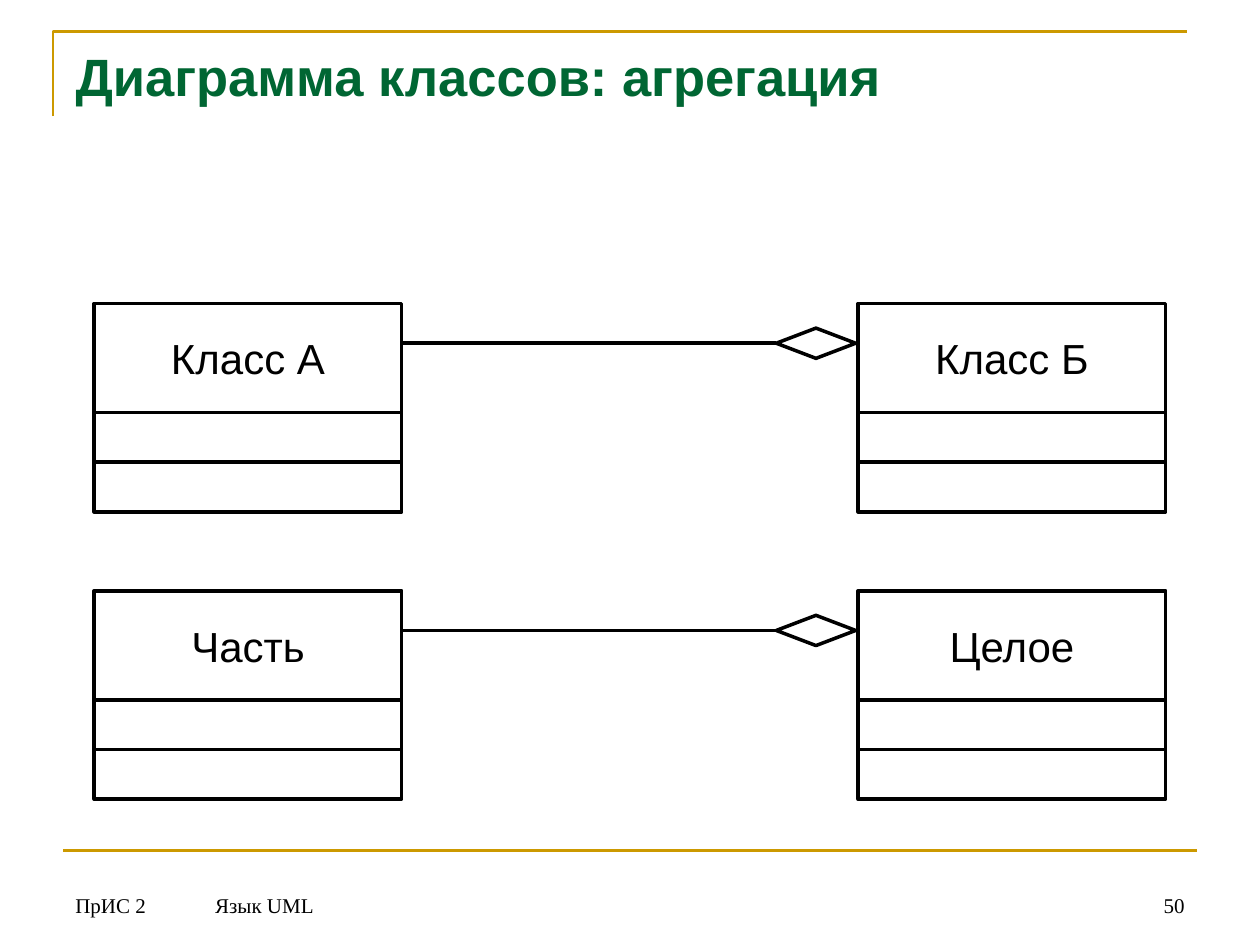
from pptx import Presentation
from pptx.dml.color import RGBColor
from pptx.enum import shapes as kinds, text as txt
from pptx.oxml.ns import qn
from pptx.util import Cm, Pt

TITLE = "Диаграмма классов: агрегация"
# (part, whole, top in cm)
AGGREGATIONS = [("Класс А", "Класс Б", 6.12), ("Часть", "Целое", 11.91)]
# (wording, left, width, alignment)
FOOTER = [
    ("ПрИС 2", 1.27, 2.44, txt.PP_ALIGN.LEFT),
    ("Язык UML", 4.09, 18.39, txt.PP_ALIGN.LEFT),
    ("50", 22.71, 1.42, txt.PP_ALIGN.RIGHT),
]

THEME = {
    "ink": RGBColor(0, 0, 0),
    "title": RGBColor(0x00, 0x66, 0x33),
    "rule": RGBColor(0xCC, 0x99, 0x00),
    "sans": "Arial",
    "serif": "Times New Roman",
    "title_size": 30,
    "class_size": 24,
    "footer_size": 12,
    "rule_width": 1.5,
    "box_width": 2,
    "link_width": 2.25,
}

PART_LEFT, WHOLE_LEFT, CLASS_W = 1.9, 17.3, 6.2
NAME_H, SECTION_H = 2.2, 1.0
DIAMOND_LEFT, DIAMOND_W, DIAMOND_H = 15.65, 1.6, 0.61
LINK_DROP = 0.8


def write(frame, wording, font, size, color, align, anchor, bold=False):
    frame.text = wording
    frame.word_wrap = True
    frame.auto_size = txt.MSO_AUTO_SIZE.NONE
    frame.vertical_anchor = anchor
    paragraph = frame.paragraphs[0]
    paragraph.alignment = align
    style = paragraph.runs[0].font
    style.name, style.size, style.bold = font, Pt(size), bold
    style.color.rgb = color


def stroke(line, color, width):
    line.color.rgb = color
    line.width = Pt(width)


def add_outline(slide, kind, left, top, width, height):
    outline = slide.shapes.add_shape(kind, Cm(left), Cm(top), Cm(width), Cm(height))
    outline.shadow.inherit = False
    outline.fill.background()
    stroke(outline.line, THEME["ink"], THEME["box_width"])
    return outline


def add_link(slide, start, end, color, width):
    link = slide.shapes.add_connector(
        kinds.MSO_CONNECTOR.STRAIGHT, *(Cm(v) for v in (*start, *end)))
    stroke(link.line, color, width)
    properties = link._element.spPr
    properties.append(properties.makeelement(qn("a:effectLst"), {}))
    return link


def add_class(slide, name, left, top):
    """Name compartment with two empty sections below it."""
    rect = kinds.MSO_SHAPE.RECTANGLE
    heading = add_outline(slide, rect, left, top, CLASS_W, NAME_H)
    write(heading.text_frame, name, THEME["sans"], THEME["class_size"],
          THEME["ink"], txt.PP_ALIGN.CENTER, txt.MSO_ANCHOR.MIDDLE)
    for section in range(2):
        add_outline(slide, rect, left, top + NAME_H + section * SECTION_H,
                    CLASS_W, SECTION_H)


def add_aggregation(slide, part, whole, top):
    link_y = top + LINK_DROP
    diamond = add_outline(slide, kinds.MSO_SHAPE.DIAMOND, DIAMOND_LEFT,
                          link_y - DIAMOND_H / 2, DIAMOND_W, DIAMOND_H)
    link = add_link(slide, (PART_LEFT + CLASS_W, link_y), (DIAMOND_LEFT, link_y),
                    THEME["ink"], THEME["link_width"])
    link.end_connect(diamond, 1)
    add_class(slide, part, PART_LEFT, top)
    add_class(slide, whole, WHOLE_LEFT, top)


def add_frame(slide):
    """Corner rule around the title and the rule above the footer."""
    builder = slide.shapes.build_freeform(Cm(1.07), Cm(2.34))
    builder.add_line_segments(
        [(Cm(1.07), Cm(0.64)), (Cm(23.93), Cm(0.64))], close=False)
    corner = builder.convert_to_shape()
    corner.shadow.inherit = False
    corner.fill.background()
    stroke(corner.line, THEME["rule"], THEME["rule_width"])
    add_link(slide, (1.27, 17.15), (24.13, 17.15), THEME["rule"], THEME["rule_width"])


def main():
    deck = Presentation()
    deck.slide_width, deck.slide_height = Cm(25.4), Cm(19.05)
    slide = deck.slides.add_slide(deck.slide_layouts[5])

    add_frame(slide)
    title = slide.shapes.title
    title.left, title.top, title.width, title.height = (
        Cm(1.27), Cm(0.76), Cm(22.86), Cm(3.18))
    write(title.text_frame, TITLE, THEME["sans"], THEME["title_size"],
          THEME["title"], txt.PP_ALIGN.LEFT, txt.MSO_ANCHOR.TOP, bold=True)

    for part, whole, top in AGGREGATIONS:
        add_aggregation(slide, part, whole, top)

    for wording, left, width, align in FOOTER:
        note = slide.shapes.add_textbox(Cm(left), Cm(17.35), Cm(width), Cm(1.27))
        write(note.text_frame, wording, THEME["serif"], THEME["footer_size"],
              THEME["ink"], align, txt.MSO_ANCHOR.BOTTOM)

    deck.save("out.pptx")


if __name__ == "__main__":
    main()
